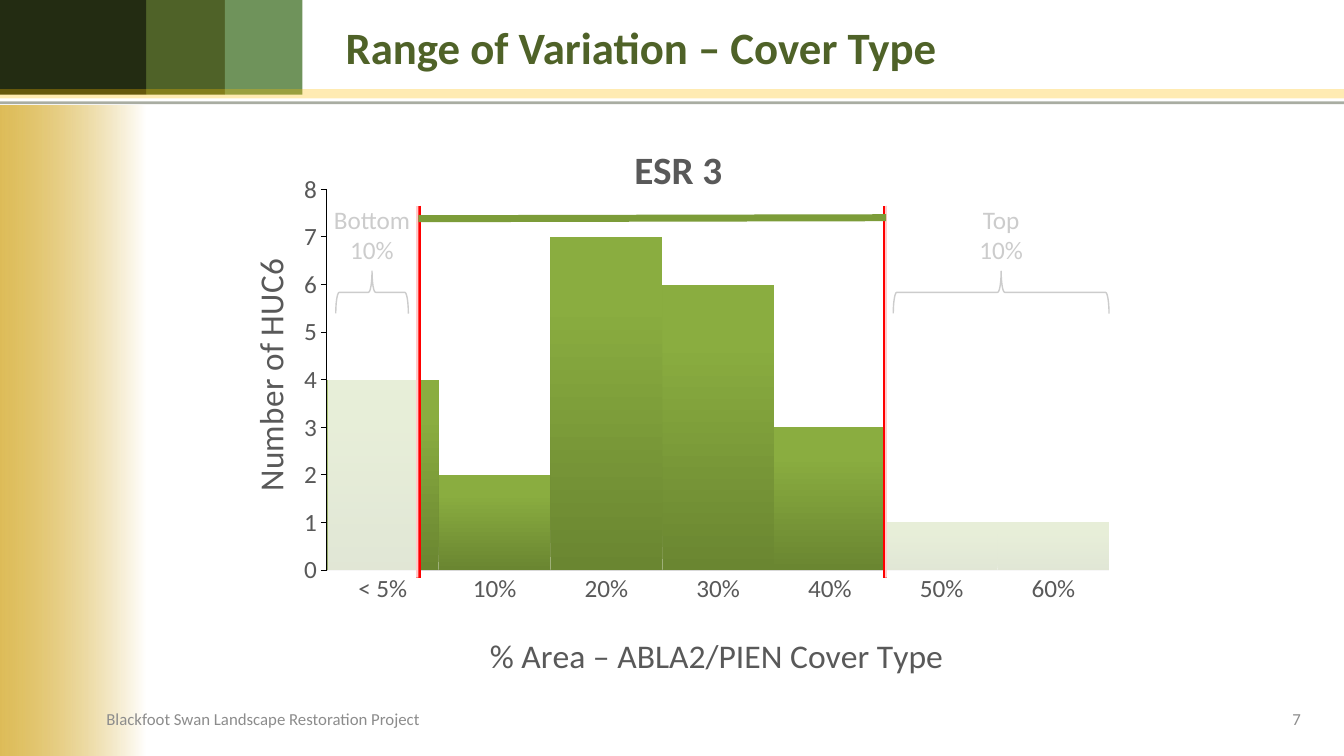
import pptx
import pptx.chart.data
import pptx.dml.color
import pptx.enum.chart
import pptx.enum.shapes
import pptx.enum.text
import pptx.oxml
import pptx.oxml.ns
import pptx.util
from lxml import etree

Inches = pptx.util.Inches
Pt = pptx.util.Pt
qn = pptx.oxml.ns.qn
SHAPE = pptx.enum.shapes.MSO_SHAPE
ALIGN = pptx.enum.text.PP_ALIGN
TICK = pptx.enum.chart.XL_TICK_MARK

COLORS = {
    "black": "000000", "white": "FFFFFF", "gold": "CC9900",
    "amber": "FFC000", "dark": "232C12", "olive": "4F6228",
    "sage": "6F935B", "red": "FF0000", "span": "7C9C39",
    "text": "595959", "foot": "8C8C8C", "rule": "D9D9D9",
    "low": "6A8631", "mid": "8AAD40", "high": "8BB03E",
}
FONT = "Calibri"
TOP, BASE = 2.04, 5.73
LOW, HIGH = 4.15, 8.78


def rgb(name):
    """Return the named colour."""
    return pptx.dml.color.RGBColor.from_string(COLORS[name])


def assign(item, **values):
    """Set each given attribute on an item."""
    for key, value in values.items():
        setattr(item, key, value)


def style(font, size, color, bold=False):
    """Format a font."""
    assign(font, name=FONT, size=Pt(size), bold=bold)
    font.color.rgb = rgb(color)


def fade(shape, part):
    """Give the colour of a shape an opacity in percent."""
    color = next(shape.element.spPr.iter(qn("a:srgbClr")))
    etree.SubElement(color, qn("a:alpha"), val=str(part * 1000))


def blend(fill, root, angle, stops):
    """Fill with a gradient of (place, colour, opacity) stops."""
    fill.gradient()
    fill.gradient_angle = angle
    group = next(root.iter(qn("a:gsLst")))
    for old in list(group):
        group.remove(old)
    for place, name, part in stops:
        stop = etree.SubElement(group, qn("a:gs"), pos=str(place * 1000))
        color = etree.SubElement(stop, qn("a:srgbClr"), val=COLORS[name])
        etree.SubElement(color, qn("a:alpha"), val=str(part * 1000))


def add_box(slide, box, color, part=100):
    """Add a plain rectangle."""
    shape = slide.shapes.add_shape(SHAPE.RECTANGLE, *map(Inches, box))
    shape.shadow.inherit = False
    shape.line.fill.background()
    shape.fill.solid()
    shape.fill.fore_color.rgb = rgb(color)
    if part < 100:
        fade(shape, part)
    return shape


def add_brace(slide, box):
    """Add a brace that points up."""
    shape = slide.shapes.add_shape(SHAPE.RIGHT_BRACE, *map(Inches, box))
    shape.rotation = 270
    shape.shadow.inherit = False
    shape.fill.background()
    shape.line.color.rgb = rgb("black")
    shape.line.width = Pt(1)


def add_line(owner, ends, color, width, part=100):
    """Add a straight line."""
    kind = pptx.enum.shapes.MSO_CONNECTOR.STRAIGHT
    line = owner.shapes.add_connector(kind, *map(Inches, ends))
    line.line.color.rgb = rgb(color)
    line.line.width = Pt(width)
    etree.SubElement(line.element.spPr, qn("a:effectLst"))
    if part < 100:
        fade(line, part)


def add_text(slide, box, lines, size, color, align, bold=False, middle=True):
    """Add a text box with one paragraph a line."""
    frame = slide.shapes.add_textbox(*map(Inches, box)).text_frame
    anchor = pptx.enum.text.MSO_ANCHOR
    assign(frame, word_wrap=True, text="\n".join(lines),
           vertical_anchor=anchor.MIDDLE if middle else anchor.TOP)
    for para in frame.paragraphs:
        para.alignment = align
        for run in para.runs:
            style(run.font, size, color, bold)


def set_title(title, text, size, x, y, bold=False):
    """Write a chart or axis title and place it."""
    frame = title.text_frame
    frame.text = text
    style(frame.paragraphs[0].runs[0].font, size, "text", bold)
    root = title._element
    for old in root.findall(qn("c:layout")):
        root.remove(old)
    layout = etree.Element(qn("c:layout"))
    root.find(qn("c:tx")).addnext(layout)
    place(layout, xMode="edge", yMode="edge", x=x, y=y)


def place(layout, **values):
    """Fill a layout with manual values."""
    manual = etree.SubElement(layout, qn("c:manualLayout"))
    for key, value in values.items():
        etree.SubElement(manual, qn("c:" + key), val=str(value))


def set_axis(axis, color, width, tick):
    """Format an axis."""
    assign(axis, has_major_gridlines=False, major_tick_mark=tick,
           minor_tick_mark=TICK.NONE)
    style(axis.tick_labels.font, 18, "text")
    axis.format.line.color.rgb = rgb(color)
    axis.format.line.width = Pt(width)


def add_chart(slide):
    """Add the histogram."""
    data = pptx.chart.data.CategoryChartData()
    data.categories = ["< 5%", "10%", "20%", "30%", "40%", "50%", "60%"]
    data.add_series("ESR 3", (4, 2, 7, 6, 3, 1, 1))
    kind = pptx.enum.chart.XL_CHART_TYPE.COLUMN_CLUSTERED
    box = map(Inches, (2.22, 1.07, 8.89, 5.75))
    chart = slide.shapes.add_chart(kind, *box, data).chart
    assign(chart, has_legend=False, has_title=True)
    style(chart.font, 10, "black")
    set_title(chart.chart_title, "ESR 3", 28, 0.45, 0.05, True)
    across, up = chart.category_axis, chart.value_axis
    set_axis(across, "rule", 1, TICK.NONE)
    set_axis(up, "black", 0.75, TICK.OUTSIDE)
    assign(up, minimum_scale=0, maximum_scale=8, major_unit=1)
    set_title(across.axis_title, "% Area – ABLA2/PIEN Cover Type", 24,
              0.29, 0.91)
    set_title(up.axis_title, "Number of HUC6", 24, 0.02, 0.26)
    plot = chart.plots[0]
    assign(plot, gap_width=0, vary_by_categories=False)
    bars = plot.series[0]
    blend(bars.format.fill, bars._element, 90,
          [(0, "low", 100), (80, "mid", 100), (100, "high", 100)])
    area = chart._chartSpace.chart.plotArea
    for old in area.findall(qn("c:layout")):
        area.remove(old)
    layout = etree.Element(qn("c:layout"))
    area.insert(0, layout)
    place(layout, layoutTarget="inner", xMode="edge", yMode="edge",
          x=0.115, y=0.143, w=0.873, h=0.667)


def add_frame(slide):
    """Add the side band, the header blocks and the rules."""
    band = add_box(slide, (0, 1.05, 2.89, 6.45), "white")
    blend(band.fill, band.element.spPr, 0,
          [(0, "gold", 65), (50, "white", 100), (100, "white", 100)])
    for left, width, color in ((1.45, 0.78, "olive"), (0, 1.45, "dark"),
                               (2.23, 0.77, "sage")):
        add_box(slide, (left, 0, width, 0.94), color)
    add_line(slide, (0, 0.93, 13.33, 0.93), "amber", 6.5, 30)
    add_line(slide, (0, 1.02, 13.33, 1.02), "dark", 2, 38)


def main():
    """Build the slide."""
    deck = pptx.Presentation()
    assign(deck, slide_width=Inches(13.33), slide_height=Inches(7.5))
    slide = deck.slides.add_slide(deck.slide_layouts[6])
    add_frame(slide)
    add_brace(slide, (9.72, 1.83, 0.42, 2.14))
    add_chart(slide)
    add_text(slide, (3.33, 0, 10, 0.92), ["Range of Variation – Cover Type"],
             32, "olive", ALIGN.LEFT, bold=True)
    add_text(slide, (0.21, 6.93, 4.8, 0.4),
             ["Blackfoot Swan Landscape Restoration Project"],
             12, "foot", ALIGN.CENTER)
    add_text(slide, (8.67, 6.93, 4.33, 0.4), ["7"], 12, "foot", ALIGN.RIGHT)
    limits = slide.shapes.add_group_shape()
    for x in (HIGH, LOW):
        add_line(limits, (x, TOP, x, BASE), "red", 3)
    add_brace(slide, (3.48, 2.54, 0.42, 0.72))
    for left, word in ((3.19, "Bottom"), (9.43, "Top")):
        add_text(slide, (left, 1.98, 1, 0.71), [word, "10%"], 18, "black",
                 ALIGN.CENTER, middle=False)
    for left, width in ((HIGH, 2.32), (3.25, 0.9)):
        add_box(slide, (left, TOP, width, BASE - TOP), "white", 80)
    add_line(slide, (LOW, 2.17, 8.79, 2.16), "span", 5)
    deck.save("out.pptx")


if __name__ == "__main__":
    main()
